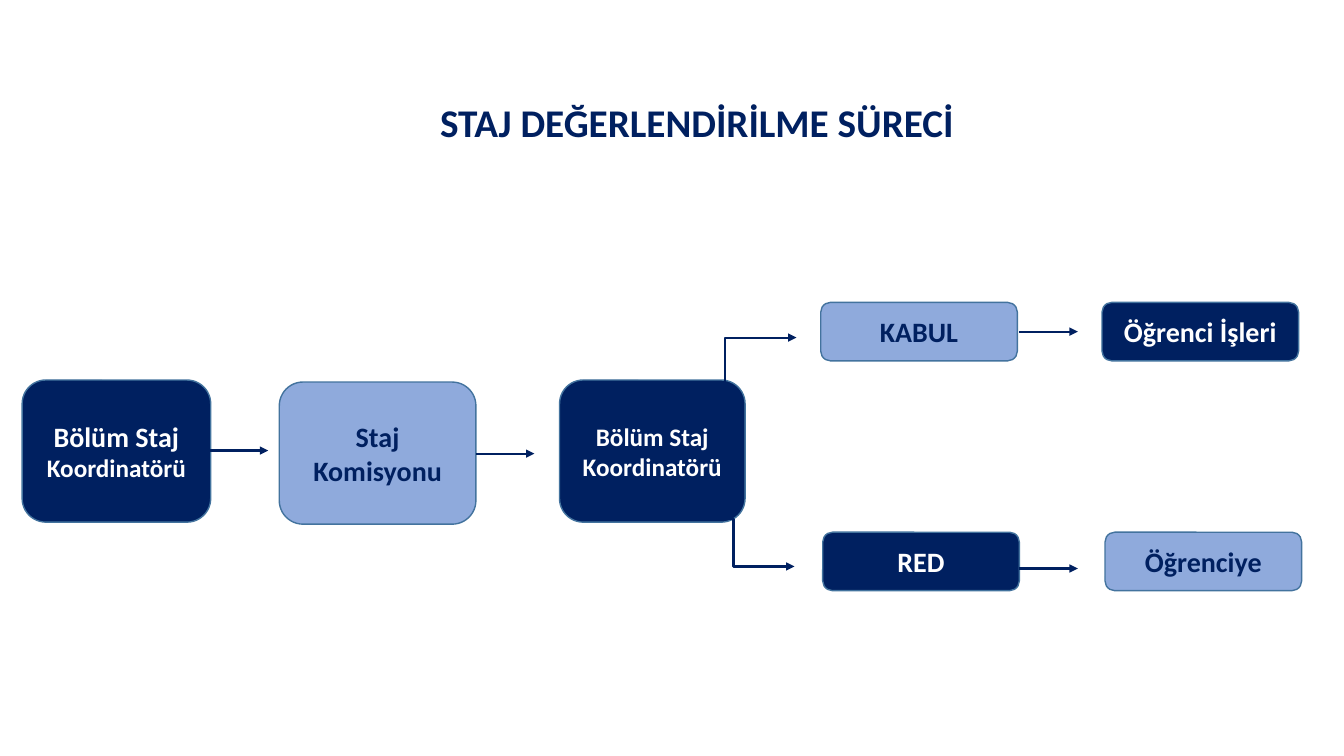
from lxml import etree
from pptx import Presentation
from pptx.dml.color import RGBColor
from pptx.enum.shapes import MSO_CONNECTOR, MSO_SHAPE
from pptx.enum.text import MSO_ANCHOR, PP_ALIGN
from pptx.oxml.ns import qn
from pptx.util import Inches, Pt

ROUNDED = MSO_SHAPE.ROUNDED_RECTANGLE
STRAIGHT, ELBOW = MSO_CONNECTOR.STRAIGHT, MSO_CONNECTOR.ELBOW
CENTER, MIDDLE = PP_ALIGN.CENTER, MSO_ANCHOR.MIDDLE

FONT = "Calibri"
NAVY, SKY, WHITE, EDGE = "002060", "8FAADC", "FFFFFF", "43739E"
TEXT_ON = {NAVY: WHITE, SKY: NAVY}

TITLE = "STAJ DEĞERLENDİRİLME SÜRECİ"
BIG, SMALL = 1.41, 0.58  # box heights
ACCEPT, REJECT = 3, 5.28  # tops of the two outcome rows

# left, top, width, height, fill, runs of (text, size)
STEPS = [
    (0.22, 3.77, 1.87, BIG, NAVY, [("Bölüm Staj ", 20), ("Koordinatörü", 18)]),
    (2.77, 3.79, 1.95, BIG, SKY, [("Staj Komisyonu", 20)]),
    (5.55, 3.77, 1.84, BIG, NAVY, [("Bölüm Staj Koordinatörü", 18)]),
    (8.14, ACCEPT, 1.95, SMALL, SKY, [("KABUL", 20)]),
    (8.16, REJECT, 1.95, SMALL, NAVY, [("RED", 20)]),
    (10.93, ACCEPT, 1.95, SMALL, NAVY, [("Öğrenci İşleri", 20)]),
    (10.96, REJECT, 1.95, SMALL, SKY, [("Öğrenciye", 20)]),
]
ARROW_LENGTH = 0.58
ARROW_STARTS = [(2.08, 4.47), (4.72, 4.5), (10.11, 3.29), (10.11, 5.64)]
# start, end, share of the width at which the elbow turns
BRANCHES = [
    ((6.56, 3.81), (7.9, 3.35), 0.474),
    ((6.67, 5.15), (7.88, 5.62), 0.5),
]


def rgb(value):
    return RGBColor.from_string(value)


def add_runs(p, runs, color):
    p.alignment = CENTER
    for text, size in runs:
        r = p.add_run()
        r.text = text
        r.font.name, r.font.size, r.font.bold = FONT, Pt(size), True
        r.font.color.rgb = rgb(color)


def add_title(s):
    tf = s.shapes.add_textbox(*map(Inches, (0.7, 0.98, 12.42, 0.6))).text_frame
    tf.word_wrap = True
    p = tf.paragraphs[0]
    p.line_spacing = 0.9
    add_runs(p, [(TITLE, 28)], NAVY)


def add_step(s, left, top, width, height, fill, runs):
    sp = s.shapes.add_shape(ROUNDED, *map(Inches, (left, top, width, height)))
    sp.shadow.inherit = False
    sp.fill.solid()
    sp.fill.fore_color.rgb = rgb(fill)
    sp.line.color.rgb = rgb(EDGE)
    sp.line.width = Pt(1)
    tf = sp.text_frame
    tf.word_wrap = True
    tf.vertical_anchor = MIDDLE
    add_runs(tf.paragraphs[0], runs, TEXT_ON[fill])


def add_arrow(s, kind, start, end, turn=None):
    arrow = s.shapes.add_connector(kind, *map(Inches, start + end))
    arrow.line.color.rgb = rgb(NAVY)
    arrow.line.width = Pt(1.5)
    etree.SubElement(arrow.line._get_or_add_ln(), qn("a:tailEnd"), type="triangle")
    props = arrow._element.spPr
    etree.SubElement(props, qn("a:effectLst"))
    if turn is not None:
        guides = props.find(qn("a:prstGeom")).get_or_add_avLst()
        etree.SubElement(guides, qn("a:gd"), name="adj1", fmla=f"val {round(turn * 100000)}")


def main():
    prs = Presentation()
    prs.slide_width, prs.slide_height = Inches(13.33), Inches(7.5)
    s = prs.slides.add_slide(prs.slide_layouts[6])
    add_title(s)
    for step in STEPS:
        add_step(s, *step)
    for x, y in ARROW_STARTS:
        add_arrow(s, STRAIGHT, (x, y), (x + ARROW_LENGTH, y))
    for start, end, turn in BRANCHES:
        add_arrow(s, ELBOW, start, end, turn)
    prs.save("out.pptx")


if __name__ == "__main__":
    main()
